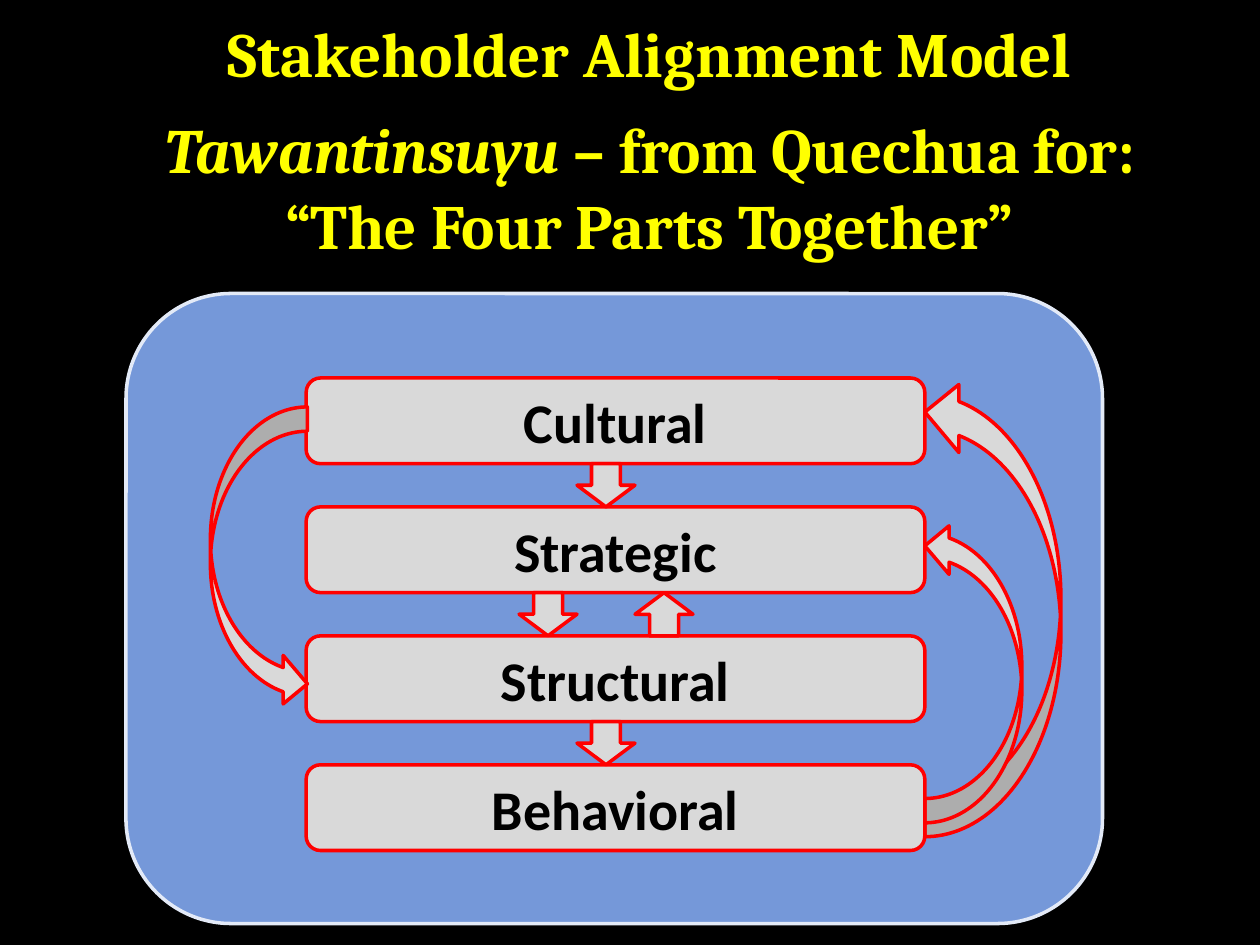
from dataclasses import dataclass

from pptx import Presentation
from pptx.dml.color import RGBColor
from pptx.enum.shapes import MSO_SHAPE
from pptx.enum.text import MSO_ANCHOR, MSO_AUTO_SIZE, PP_ALIGN
from pptx.shapes.autoshape import Shape
from pptx.shapes.shapetree import GroupShapes, SlideShapes
from pptx.slide import Slide
from pptx.util import Inches, Pt

ROUNDED = MSO_SHAPE.ROUNDED_RECTANGLE
DOWN = MSO_SHAPE.DOWN_ARROW
CURVED = MSO_SHAPE.CURVED_RIGHT_ARROW
CENTER = PP_ALIGN.CENTER
TOP = MSO_ANCHOR.TOP
MIDDLE = MSO_ANCHOR.MIDDLE
NO_AUTOFIT = MSO_AUTO_SIZE.NONE
TITLE_ONLY = 5


@dataclass(frozen=True)
class Theme:
    background: RGBColor = RGBColor(0, 0, 0)
    title: RGBColor = RGBColor(0xFF, 0xFF, 0)
    panel: RGBColor = RGBColor(0x75, 0x98, 0xD9)
    panel_edge: RGBColor = RGBColor(0xE3, 0xEA, 0xF7)
    tier: RGBColor = RGBColor(0xD9, 0xD9, 0xD9)
    tier_edge: RGBColor = RGBColor(0xFF, 0, 0)
    label: RGBColor = RGBColor(0, 0, 0)
    title_font: str = "Cambria"
    label_font: str = "Calibri"
    title_size: int = 36
    label_size: int = 32
    edge_width: int = 2


@dataclass(frozen=True)
class Box:
    left: float
    top: float
    width: float
    height: float


@dataclass(frozen=True)
class Arrow:
    preset: MSO_SHAPE
    box: Box
    rotation: int = 0


THEME = Theme()
TIERS = ("Cultural", "Strategic", "Structural", "Behavioral")
TIER_LEFT, TIER_TOP, TIER_WIDTH, TIER_HEIGHT = 2.43, 3, 4.91, 0.68
TIER_RIGHT = TIER_LEFT + TIER_WIDTH
TIER_PITCH = (6.07 - TIER_TOP) / (len(TIERS) - 1)
STEP_WIDTH = 0.46
STEP_CENTER = 4.81


def step(gap: int, offset: float = 0, rotation: int = 0) -> Arrow:
    left = STEP_CENTER + (offset - 0.5) * STEP_WIDTH
    top = TIER_TOP + gap * TIER_PITCH + TIER_HEIGHT
    return Arrow(DOWN, Box(left, top, STEP_WIDTH, TIER_PITCH - TIER_HEIGHT), rotation)


FEEDBACK = (
    Arrow(CURVED, Box(TIER_RIGHT, 3, 1.08, 3.64), 180),
    Arrow(CURVED, Box(TIER_RIGHT, 4.14, 0.77, 2.39), 180),
)
FORWARD = (
    step(2),
    step(1, -1),
    step(1, 1, 180),
    step(0),
    Arrow(CURVED, Box(1.67, 3.23, 0.77, 2.39)),
)


def draw_shape(shapes: SlideShapes | GroupShapes, preset: MSO_SHAPE, box: Box,
               fill: RGBColor, edge: RGBColor) -> Shape:
    shape = shapes.add_shape(preset, Inches(box.left), Inches(box.top),
                             Inches(box.width), Inches(box.height))
    shape.shadow.inherit = False
    shape.fill.solid()
    shape.fill.fore_color.rgb = fill
    shape.line.color.rgb = edge
    shape.line.width = Pt(THEME.edge_width)
    return shape


def draw_arrow(shapes: GroupShapes, arrow: Arrow) -> None:
    shape = draw_shape(shapes, arrow.preset, arrow.box, THEME.tier, THEME.tier_edge)
    shape.rotation = arrow.rotation


def draw_tier(shapes: GroupShapes, label: str, row: int) -> None:
    box = Box(TIER_LEFT, TIER_TOP + row * TIER_PITCH, TIER_WIDTH, TIER_HEIGHT)
    tier = draw_shape(shapes, ROUNDED, box, THEME.tier, THEME.tier_edge)
    tier.text_frame.text = label
    tier.text_frame.vertical_anchor = MIDDLE
    paragraph = tier.text_frame.paragraphs[0]
    paragraph.alignment = CENTER
    font = paragraph.runs[0].font
    font.name = THEME.label_font
    font.size = Pt(THEME.label_size)
    font.bold = True
    font.color.rgb = THEME.label


def write_title(slide: Slide) -> None:
    title = slide.shapes.title
    title.left, title.top = Inches(1.14), Inches(0.17)
    title.width, title.height = Inches(8.03), Inches(1.16)
    frame = title.text_frame
    frame.auto_size = NO_AUTOFIT
    frame.word_wrap = True
    frame.vertical_anchor = TOP
    frame.margin_left = frame.margin_right = frame.margin_top = frame.margin_bottom = 0
    frame.text = "Stakeholder Alignment Model"
    heading = frame.paragraphs[0]
    heading.line_spacing = Pt(39.5)
    meaning = frame.add_paragraph()
    meaning.text = "Tawantinsuyu"
    meaning.runs[0].font.italic = True
    meaning.add_run().text = " – from Quechua for:"
    meaning.add_line_break()
    meaning.add_run().text = "“The Four Parts Together”"
    meaning.line_spacing = Pt(43.5)
    meaning.space_before = Pt(11)
    for paragraph in frame.paragraphs:
        paragraph.alignment = CENTER
        for run in paragraph.runs:
            run.font.name = THEME.title_font
            run.font.size = Pt(THEME.title_size)
            run.font.bold = True
            run.font.color.rgb = THEME.title


def main() -> None:
    presentation = Presentation()
    presentation.slide_width, presentation.slide_height = Inches(10), Inches(7.5)
    slide = presentation.slides.add_slide(presentation.slide_layouts[TITLE_ONLY])
    slide.background.fill.solid()
    slide.background.fill.fore_color.rgb = THEME.background
    draw_shape(slide.shapes, ROUNDED, Box(1, 2.33, 7.75, 5), THEME.panel, THEME.panel_edge)
    write_title(slide)
    model = slide.shapes.add_group_shape().shapes
    for arrow in FEEDBACK:
        draw_arrow(model, arrow)
    for row, label in enumerate(TIERS):
        draw_tier(model, label, row)
    for arrow in FORWARD:
        draw_arrow(model, arrow)
    presentation.save("out.pptx")


if __name__ == "__main__":
    main()
